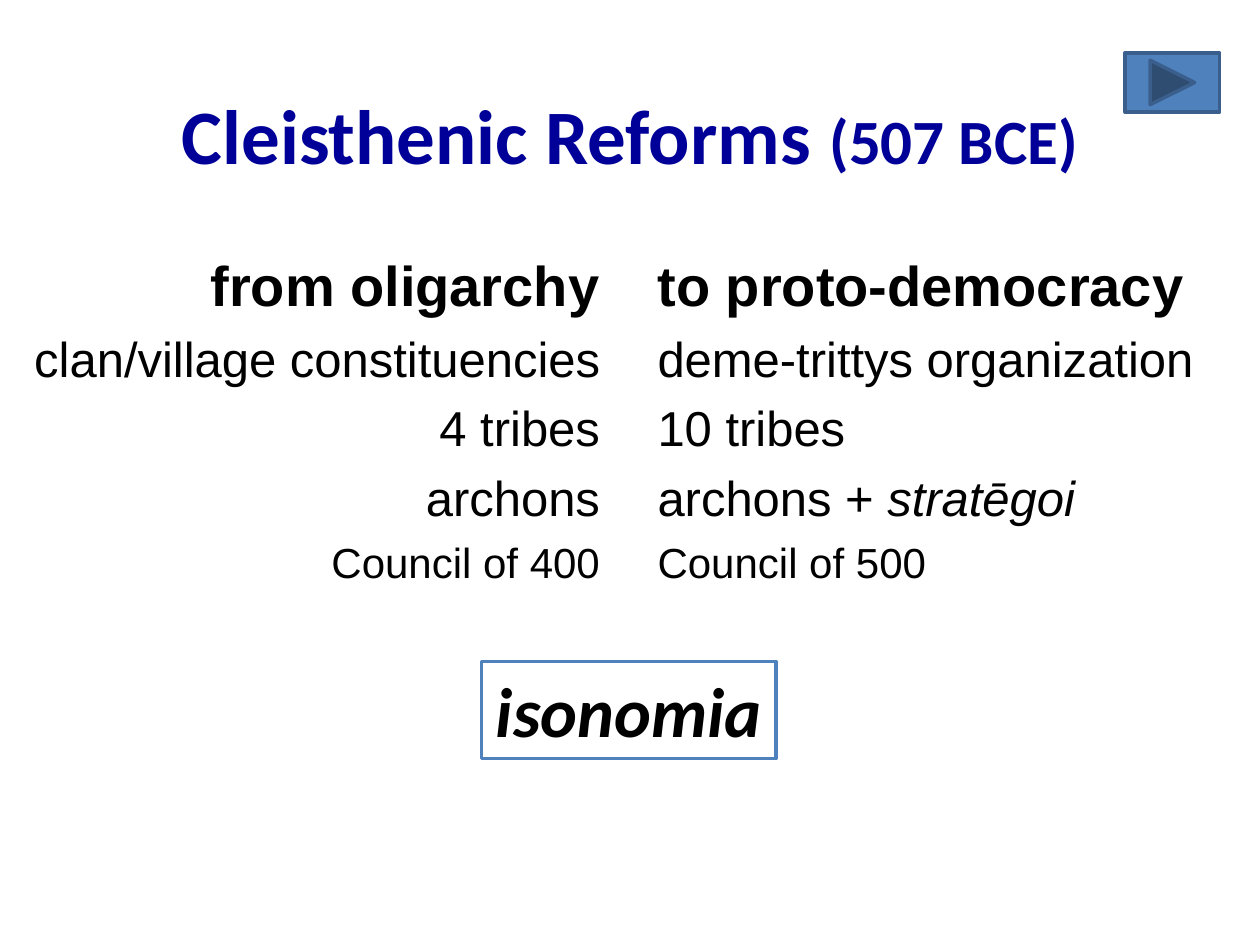
import dataclasses

import pptx
import pptx.dml.color
import pptx.enum.shapes
import pptx.enum.text
import pptx.util

Inches = pptx.util.Inches
Pt = pptx.util.Pt
RGB = pptx.dml.color.RGBColor.from_string
ALIGN = pptx.enum.text.PP_ALIGN
ANCHOR = pptx.enum.text.MSO_ANCHOR
SHAPE = pptx.enum.shapes.MSO_SHAPE


@dataclasses.dataclass(frozen=True)
class Theme:
    heading_font: str = "Calibri"
    body_font: str = "Arial"
    navy: str = "000099"
    black: str = "000000"
    blue: str = "4F81BD"
    dark_blue: str = "3A5F8C"
    title: int = 44
    date: int = 36
    column_head: int = 32
    body: int = 28
    small: int = 24
    term: int = 40
    line: int = 2


theme = Theme()


def style(r, font, size, color, bold=False, italic=False):
    r.font.name = font
    r.font.size = Pt(size)
    r.font.color.rgb = RGB(color)
    r.font.bold = bold
    r.font.italic = italic


prs = pptx.Presentation()
prs.slide_width, prs.slide_height = Inches(10), Inches(7.5)
s = prs.slides.add_slide(prs.slide_layouts[5])

# Title
sp = s.shapes.title
sp.left, sp.top, sp.width, sp.height = map(Inches, (0.32, 0.29, 9.36, 1.54))
tf = sp.text_frame
tf.vertical_anchor = ANCHOR.MIDDLE
p = tf.paragraphs[0]
p.alignment = ALIGN.CENTER
for text, size in (("Cleisthenic Reforms ", theme.title), ("(507 BCE)", theme.date)):
    r = p.add_run()
    r.text = text
    style(r, theme.heading_font, size, theme.navy, bold=True)

# Before and after columns; each line is a plain part and an optional italic part
sizes = (theme.column_head, theme.body, theme.body, theme.body, theme.small)
columns = (
    (0.11, 4.75, ALIGN.RIGHT, (
        ("from oligarchy",), ("clan/village constituencies",), ("4 tribes",),
        ("archons",), ("Council of 400",))),
    (5.12, 4.51, ALIGN.LEFT, (
        ("to proto-democracy",), ("deme-trittys organization",), ("10 tribes",),
        ("archons + ", "stratēgoi"), ("Council of 500",))),
)
for left, width, align, lines in columns:
    sp = s.shapes.add_textbox(Inches(left), Inches(1.94), Inches(width), Inches(2.79))
    tf = sp.text_frame
    tf.word_wrap = False
    tf.auto_size = pptx.enum.text.MSO_AUTO_SIZE.SHAPE_TO_FIT_TEXT
    for i, (parts, size) in enumerate(zip(lines, sizes)):
        p = tf.paragraphs[0] if i == 0 else tf.add_paragraph()
        p.alignment = align
        p.space_after = Pt(6)
        for j, text in enumerate(parts):
            r = p.add_run()
            r.text = text
            style(r, theme.body_font, size, theme.black, bold=i == 0, italic=j == 1)

# Boxed key term
sp = s.shapes.add_shape(SHAPE.RECTANGLE, Inches(3.82), Inches(5.25), Inches(2.34), Inches(0.77))
sp.shadow.inherit = False
sp.fill.background()
sp.line.color.rgb = RGB(theme.blue)
sp.line.width = Pt(theme.line)
tf = sp.text_frame
tf.word_wrap = False
tf.auto_size = pptx.enum.text.MSO_AUTO_SIZE.SHAPE_TO_FIT_TEXT
tf.vertical_anchor = ANCHOR.TOP
tf.text = "isonomia"
p = tf.paragraphs[0]
p.alignment = ALIGN.CENTER
style(p.runs[0], theme.heading_font, theme.term, theme.black, bold=True, italic=True)

# Forward button
sp = s.shapes.add_shape(SHAPE.ACTION_BUTTON_FORWARD_OR_NEXT,
                        Inches(8.93), Inches(0.42), Inches(0.75), Inches(0.47))
sp.shadow.inherit = False
sp.fill.solid()
sp.fill.fore_color.rgb = RGB(theme.blue)
sp.line.color.rgb = RGB(theme.dark_blue)
sp.line.width = Pt(theme.line)

prs.save("out.pptx")
